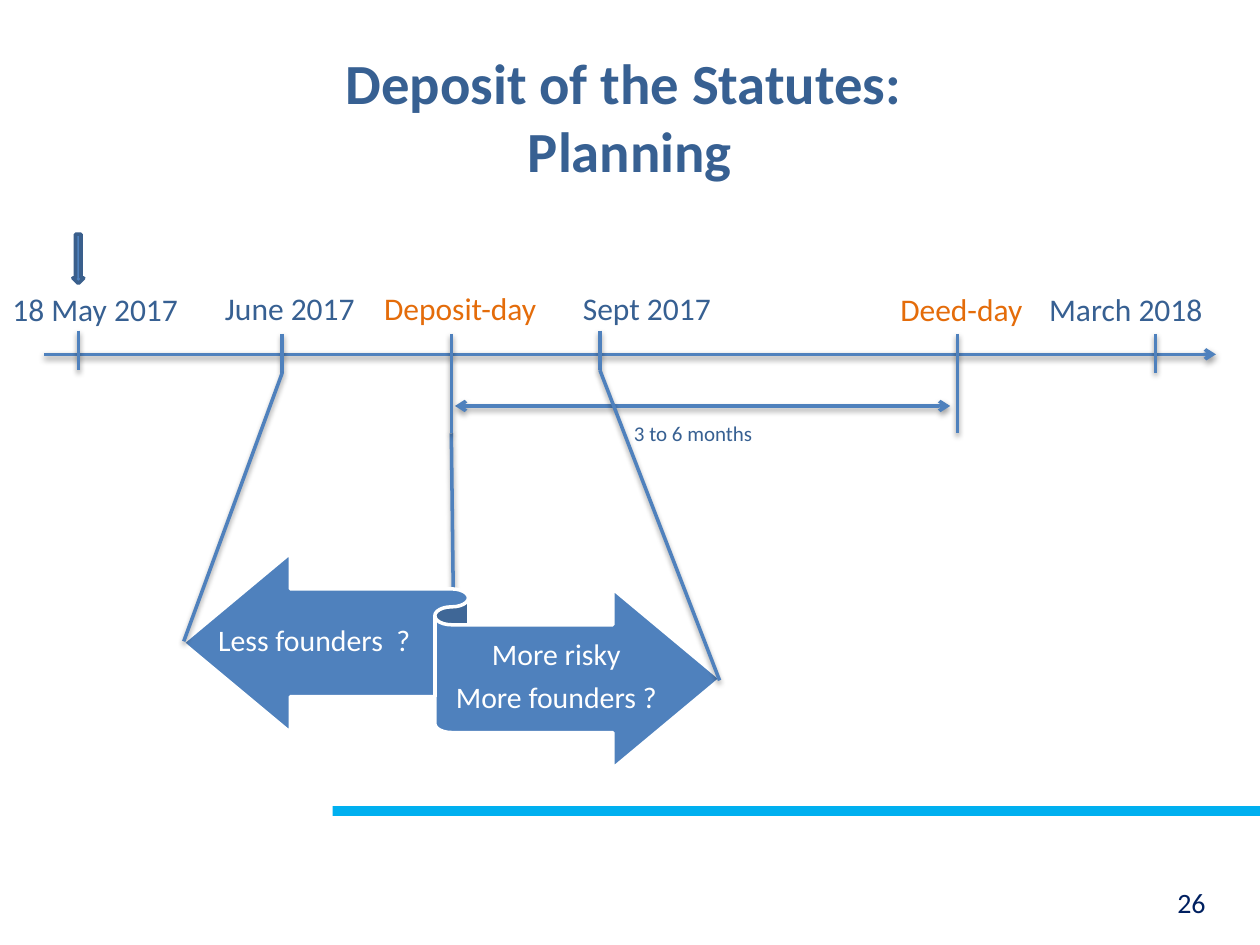
from dataclasses import dataclass

from pptx import Presentation, oxml, util as u
from pptx.dml.color import RGBColor
from pptx.enum import shapes, text
from pptx.oxml import ns

BLUE = RGBColor(0x4F, 0x81, 0xBD)
DARK_BLUE = RGBColor(0x37, 0x60, 0x92)
OUTLINE_BLUE = RGBColor(0x3A, 0x5F, 0x8C)
NAVY = RGBColor(0x00, 0x20, 0x60)
CYAN = RGBColor(0x00, 0xB0, 0xF0)
ORANGE = RGBColor(0xE4, 0x6C, 0x0A)
WHITE = RGBColor(0xFF, 0xFF, 0xFF)

LEFT, CENTER, RIGHT = text.PP_ALIGN.LEFT, text.PP_ALIGN.CENTER, text.PP_ALIGN.RIGHT
TOP, MIDDLE = text.MSO_ANCHOR.TOP, text.MSO_ANCHOR.MIDDLE

SHADOW = (
    f'<a:effectLst {ns.nsdecls("a")}>'
    '<a:outerShdw blurRad="40000" dist="20000" dir="5400000" rotWithShape="0">'
    '<a:srgbClr val="000000"><a:alpha val="38000"/></a:srgbClr>'
    '</a:outerShdw></a:effectLst>'
)


@dataclass
class Label:
    lines: tuple[str, ...]
    left: float
    top: float
    width: float
    height: float
    size: float = 18
    color: RGBColor = DARK_BLUE
    align: text.PP_ALIGN = LEFT
    anchor: text.MSO_ANCHOR = TOP
    bold: bool = False
    in_ribbon: bool = False


@dataclass
class Line:
    x1: float
    y1: float
    x2: float
    y2: float
    arrows: tuple[str, ...] = ()


@dataclass
class Block:
    kind: shapes.MSO_SHAPE
    left: float
    top: float
    width: float
    height: float
    fill: RGBColor
    outline: RGBColor | None = None


def set_all(target, values: dict) -> None:
    for name, value in values.items():
        setattr(target, name, value)


def add_label(page, label: Label) -> None:
    box = page.shapes.add_textbox(
        u.Pt(label.left), u.Pt(label.top), u.Pt(label.width), u.Pt(label.height))
    frame = box.text_frame
    set_all(frame, {"word_wrap": True, "vertical_anchor": label.anchor})
    if label.in_ribbon:
        set_all(frame, {"margin_left": 0, "margin_right": 0,
                        "margin_top": u.Pt(5), "margin_bottom": u.Pt(5)})
    for index, line in enumerate(label.lines):
        para = frame.add_paragraph() if index else frame.paragraphs[0]
        para.text = line
        para.alignment = label.align
        if label.in_ribbon:
            set_all(para, {"line_spacing": 0.9, "space_after": u.Pt(6)})
        for span in para.runs:
            set_all(span.font, {"name": "Calibri", "size": u.Pt(label.size),
                                "bold": label.bold})
            span.font.color.rgb = label.color


def add_line(page, line: Line) -> None:
    connector = page.shapes.add_connector(
        shapes.MSO_CONNECTOR.STRAIGHT,
        u.Pt(line.x1), u.Pt(line.y1), u.Pt(line.x2), u.Pt(line.y2))
    connector.line.color.rgb = BLUE
    connector.line.width = u.Pt(2)
    stroke = connector.line._get_or_add_ln()
    for end in line.arrows:
        stroke.append(oxml.parse_xml(
            f'<a:{end} {ns.nsdecls("a")} type="arrow"/>'))
    connector._element.spPr.append(oxml.parse_xml(SHADOW))


def add_block(page, block: Block) -> None:
    shape = page.shapes.add_shape(
        block.kind, u.Pt(block.left), u.Pt(block.top),
        u.Pt(block.width), u.Pt(block.height))
    shape.shadow.inherit = False
    shape.fill.solid()
    shape.fill.fore_color.rgb = block.fill
    if block.outline is None:
        shape.line.fill.background()
    else:
        shape.line.color.rgb = block.outline
        shape.line.width = u.Pt(2)


# Positions of the dates along the time axis
AXIS_Y = 202.5
MAY, JUNE, DEPOSIT, SEPT, DEED, MARCH = 44.8, 161.3, 257.9, 342.8, 547.2, 660.3
TICK_TOP, TICK_END, LONG_END = 190.8, 213, 247.6
EARLY_TOP, EARLY_END = 189, 211.5

FOOTER_BAR = Block(shapes.MSO_SHAPE.RECTANGLE, 190, 460.6, 530, 5.6, CYAN)
TODAY_ARROW = Block(shapes.MSO_SHAPE.DOWN_ARROW, 41.6, 133.8, 6.3, 28.2,
                    BLUE, OUTLINE_BLUE)
RIBBON = Block(shapes.MSO_SHAPE.LEFT_RIGHT_RIBBON, 104.4, 316, 307.4, 123.1,
               BLUE, WHITE)

DEPOSIT_DROP = Line(DEPOSIT, LONG_END, 259.2, 355)
TIMELINE = (
    Line(25.2, AXIS_Y, 694.8, AXIS_Y, ("tailEnd",)),
    Line(MAY, EARLY_TOP, MAY, EARLY_END),
    Line(SEPT, EARLY_TOP, SEPT, EARLY_END),
    Line(MARCH, TICK_TOP, MARCH, TICK_END),
    Line(JUNE, TICK_TOP, JUNE, TICK_END),
    Line(DEED, TICK_TOP, DEED, LONG_END),
    Line(260, 232, 543, 232, ("headEnd", "tailEnd")),
)
RIBBON_LINES = (
    Line(JUNE, TICK_END, 105, 366.5),
    Line(SEPT, EARLY_END, 411.2, 388.8),
    Line(DEPOSIT, TICK_TOP, DEPOSIT, LONG_END),
)

LABELS = (
    Label(("Deposit of the Statutes: \vPlanning",), 36, 21, 648, 90, 32.4,
          align=CENTER, anchor=MIDDLE, bold=True),
    Label(("26",), 528, 502.6, 168, 29, 16, NAVY, RIGHT),
    Label(("18 May 2017",), 0, 162, 116, 29),
    Label(("June 2017",), 121.5, 161.5, 102, 29),
    Label(("Deposit-day",), 212.4, 161.5, 108, 29, color=ORANGE),
    Label(("Sept 2017",), 326, 161.5, 102, 29),
    Label(("Deed-day",), 507.4, 162, 88, 29, color=ORANGE),
    Label(("March 2018",), 592.4, 162, 119, 29),
    Label(("3 to 6 months",), 337.4, 237, 117.4, 21.8, 12, align=CENTER),
)
RIBBON_LABELS = (
    Label(("Less founders  ?",), 105.8, 336.4, 147.6, 60.4, 17, WHITE,
          CENTER, MIDDLE, in_ribbon=True),
    Label(("More risky", "More founders ?"), 257.9, 357, 120, 60.4, 17, WHITE,
          CENTER, MIDDLE, in_ribbon=True),
)


def main() -> None:
    deck = Presentation()
    set_all(deck, {"slide_width": u.Pt(720), "slide_height": u.Pt(540)})
    page = deck.slides.add_slide(deck.slide_layouts[6])

    # Footer bar and time axis
    add_block(page, FOOTER_BAR)
    add_line(page, DEPOSIT_DROP)
    add_block(page, TODAY_ARROW)
    for line in TIMELINE:
        add_line(page, line)
    for label in LABELS:
        add_label(page, label)

    # Ribbon with the two options and the lines leading to it
    add_block(page, RIBBON)
    for label in RIBBON_LABELS:
        add_label(page, label)
    for line in RIBBON_LINES:
        add_line(page, line)

    deck.save("out.pptx")


if __name__ == "__main__":
    main()
